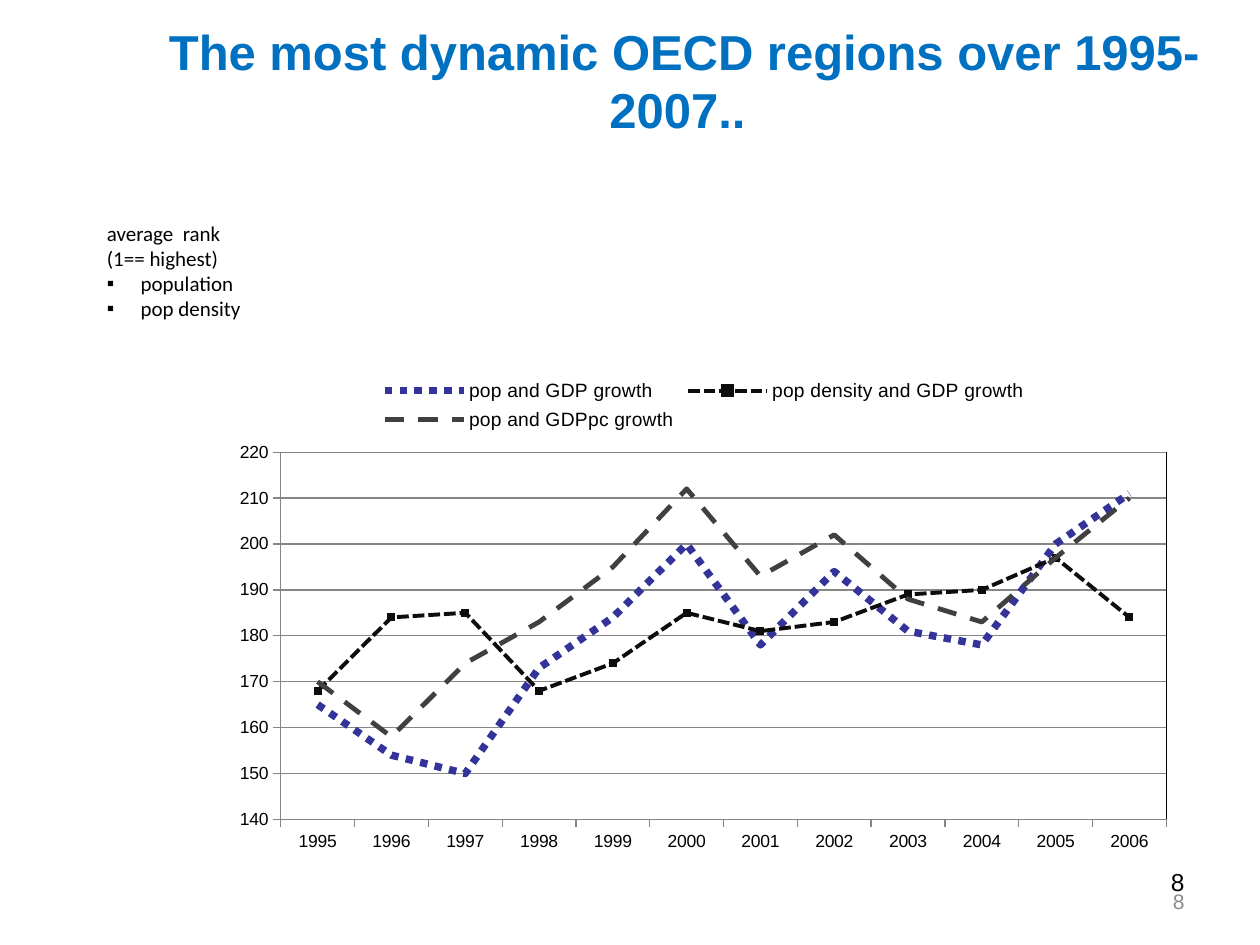
"""Build a slide with a line chart of the ranks of dynamic OECD regions."""
import lxml.etree
import pptx
import pptx.chart.data
import pptx.dml.color
import pptx.enum.chart
import pptx.enum.dml
import pptx.enum.text
import pptx.oxml.ns
import pptx.util

COLORS = {"title": "0070C0", "text": "000000", "number": "8C8C8C", "axis": "868686",
          "blue": "333399", "black": "0D0D0D", "grey": "404040"}
W, H = 10, 7.5
DASH = pptx.enum.dml.MSO_LINE
ALIGN = pptx.enum.text.PP_ALIGN
ANCHOR = pptx.enum.text.MSO_ANCHOR
YEARS = [str(year) for year in range(1995, 2007)]
SERIES = [
    ("pop and GDP growth", "blue", 4.25, DASH.ROUND_DOT, False,
     (165, 154, 150, 173, 184, 200, 178, 194, 181, 178, 200, 211)),
    ("pop density and GDP growth", "black", 2.25, DASH.SQUARE_DOT, True,
     (168, 184, 185, 168, 174, 185, 181, 183, 189, 190, 197, 184)),
    ("pop and GDPpc growth", "grey", 2.75, DASH.DASH, False,
     (170, 158, 174, 183, 195, 212, 193, 202, 188, 183, 197, 210)),
]


def rgb(name):
    """Return a named colour."""
    return pptx.dml.color.RGBColor.from_string(COLORS[name])


def assign(obj, **values):
    """Set attributes of an object from format values."""
    for name, value in values.items():
        setattr(obj, name, value)


def add_child(parent, tag, **attrs):
    """Append an XML element with attributes."""
    child = lxml.etree.SubElement(parent, pptx.oxml.ns.qn(tag))
    for name, value in attrs.items():
        child.set(name, str(value))
    return child


def style(font, size, color="text", face="Arial", bold=False):
    """Format a font."""
    assign(font, size=pptx.util.Pt(size), name=face, bold=bold)
    font.color.rgb = rgb(color)


def place(sp, left, top, width, height):
    """Position a shape in inches."""
    box = dict(left=left, top=top, width=width, height=height)
    assign(sp, **{k: pptx.util.Inches(v) for k, v in box.items()})


def write(sp, lines, align, anchor, **font):
    """Fill a shape with paragraphs in one style."""
    tf = sp.text_frame
    assign(tf, word_wrap=True, vertical_anchor=anchor, text="\n".join(lines))
    for p in tf.paragraphs:
        p.alignment = align
        style(p.runs[0].font, **font)
    return tf


def add_text(slide, box, lines, align=ALIGN.LEFT, anchor=ANCHOR.TOP, **font):
    """Add a text box."""
    sp = slide.shapes.add_textbox(*map(pptx.util.Inches, box))
    return write(sp, lines, align, anchor, **font)


def add_bullet(p, indent=0.23):
    """Give a paragraph a square bullet with a hanging indent."""
    ppr = p._p.get_or_add_pPr()
    emu = pptx.util.Inches(indent)
    ppr.set("marL", str(emu))
    ppr.set("indent", str(-emu))
    add_child(ppr, "a:buFont", typeface="Arial")
    add_child(ppr, "a:buChar", char="▪")


def set_layout(element, x, y, w, h, inner=False):
    """Place a plot area or legend by shares of the chart size."""
    qn = pptx.oxml.ns.qn
    layout = element.find(qn("c:layout"))
    if layout is None:
        layout = lxml.etree.Element(qn("c:layout"))
        element.insert(1 if element.tag == qn("c:legend") else 0, layout)
    manual = add_child(layout, "c:manualLayout")
    target = {"layoutTarget": "inner"} if inner else {}
    for key, val in {**target, "xMode": "edge", "yMode": "edge",
                     "x": x, "y": y, "w": w, "h": h}.items():
        add_child(manual, "c:" + key, val=val)


def add_border(plot_area, color):
    """Outline the plot area."""
    props = add_child(plot_area, "c:spPr")
    add_child(props, "a:noFill")
    line = add_child(props, "a:ln", w=pptx.util.Pt(0.75))
    add_child(add_child(line, "a:solidFill"), "a:srgbClr", val=COLORS[color])


def format_axis(axis):
    """Format the line, ticks and labels of an axis."""
    axis.major_tick_mark = pptx.enum.chart.XL_TICK_MARK.OUTSIDE
    axis.format.line.color.rgb = rgb("axis")
    style(axis.tick_labels.font, 10)


def format_series(ser, color, width, dash, marked):
    """Format a line and its markers."""
    ser.smooth = False
    ser.format.line.color.rgb = rgb(color)
    assign(ser.format.line, width=pptx.util.Pt(width), dash_style=dash)
    markers = pptx.enum.chart.XL_MARKER_STYLE
    ser.marker.style = markers.SQUARE if marked else markers.NONE
    if marked:
        ser.marker.size = 4
        ser.marker.format.fill.solid()
        ser.marker.format.fill.fore_color.rgb = rgb(color)
        ser.marker.format.line.fill.background()


def add_line_chart(slide, box):
    """Add the chart of average ranks."""
    data = pptx.chart.data.CategoryChartData(number_format="#,##0")
    data.categories = YEARS
    for name, *_, values in SERIES:
        data.add_series(name, values)
    kind = pptx.enum.chart.XL_CHART_TYPE.LINE_MARKERS
    chart = slide.shapes.add_chart(kind, *map(pptx.util.Inches, box), data).chart
    style(chart.font, 10)
    assign(chart, has_title=False, has_legend=True)
    assign(chart.legend, include_in_layout=False,
           position=pptx.enum.chart.XL_LEGEND_POSITION.TOP)
    style(chart.legend.font, 11)
    chart.plots[0].vary_by_categories = False
    for ser, (_, *look, _) in zip(chart.plots[0].series, SERIES):
        format_series(ser, *look)
    for axis in (chart.category_axis, chart.value_axis):
        format_axis(axis)
    assign(chart.value_axis, minimum_scale=140, maximum_scale=220, major_unit=10,
           has_major_gridlines=True)
    chart.value_axis.major_gridlines.format.line.color.rgb = rgb("axis")
    assign(chart.value_axis.tick_labels, number_format="#,##0",
           number_format_is_linked=False)
    plot_area = chart._chartSpace.chart.plotArea
    set_layout(plot_area, 0.06, 0.18, 0.92, 0.74, inner=True)
    add_border(plot_area, "text")
    set_layout(chart.legend._element, 0.16, 0.02, 0.68, 0.13)


def main():
    """Build and save the slide."""
    prs = pptx.Presentation()
    assign(prs, slide_width=pptx.util.Inches(W), slide_height=pptx.util.Inches(H))
    slide = prs.slides.add_slide(prs.slide_layouts[5])
    title = slide.shapes.title
    place(title, 0.86, 0.28, 9.14, 0.71)
    tf = write(title, ["The most dynamic OECD regions over 1995-2007.. "],
               ALIGN.CENTER, ANCHOR.MIDDLE, size=28, color="title", bold=True)
    tf.auto_size = pptx.enum.text.MSO_AUTO_SIZE.NONE
    add_line_chart(slide, (1.77, 2.88, 7.64, 3.94))
    note = add_text(slide, (0.75, 1.7, 1.42, 0.91),
                    ["average  rank (1== highest)", " population", " pop density"],
                    size=12, face="Calibri")
    for p in note.paragraphs[1:]:
        add_bullet(p)
    add_text(slide, (7.17, 6.83, 2.33, 0.52), ["8"], ALIGN.RIGHT, size=14)
    add_text(slide, (7.17, 6.95, 2.33, 0.4), ["8"], ALIGN.RIGHT, ANCHOR.MIDDLE,
             size=12, color="number")
    prs.save("out.pptx")


if __name__ == "__main__":
    main()
